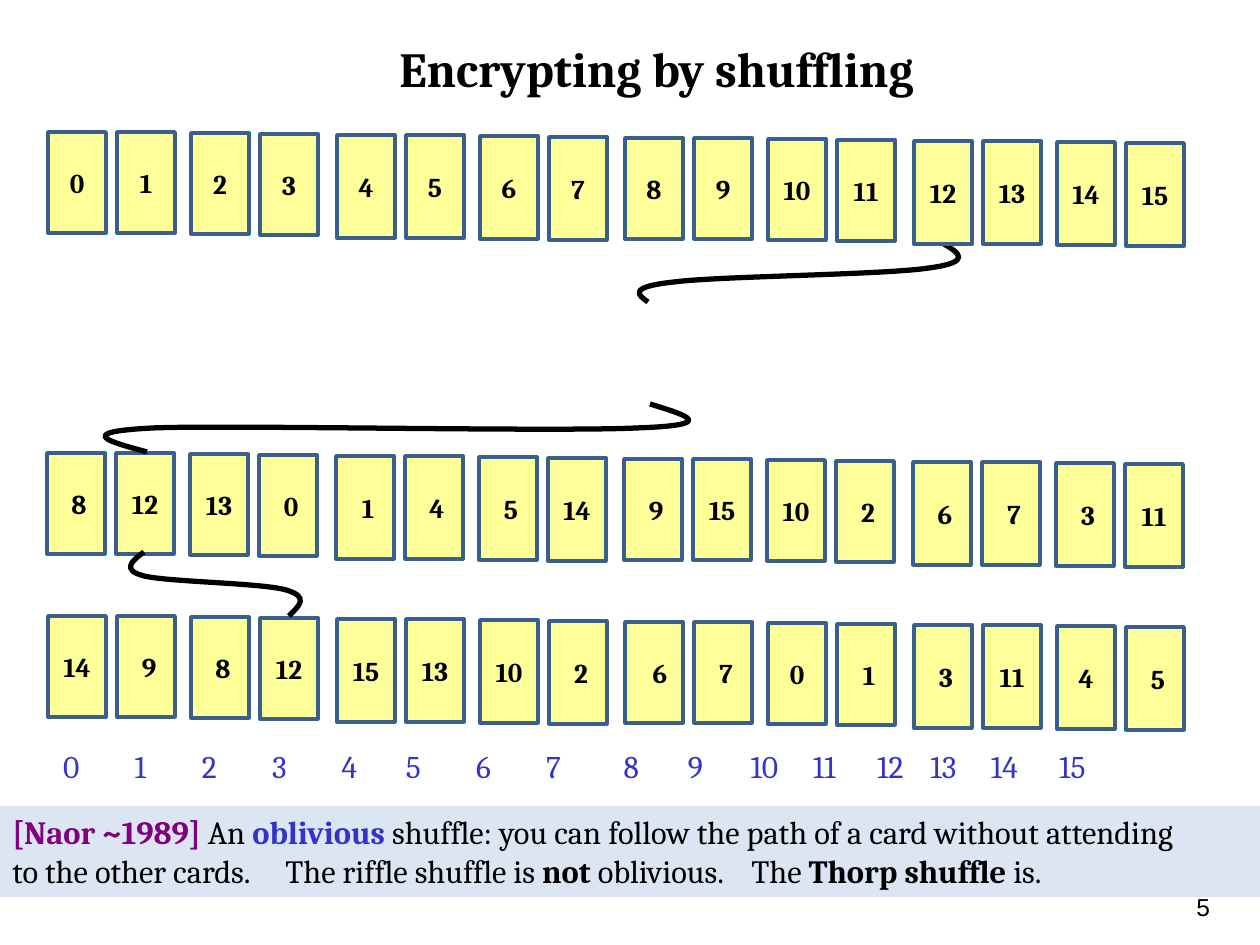
"""Build the card shuffling slide with three rows of cards and traced paths."""
import pptx
import pptx.dml.color
import pptx.enum.shapes
import pptx.enum.text
import pptx.oxml.ns
import pptx.util
import lxml.etree

RGB = pptx.dml.color.RGBColor
BLACK = RGB(0x00, 0x00, 0x00)
BLUE = RGB(0x33, 0x33, 0xCC)
PURPLE = RGB(0x80, 0x00, 0x80)
YELLOW = RGB(0xFF, 0xFF, 0x99)
NAVY = RGB(0x3A, 0x5F, 0x8C)
PALE = RGB(0xDC, 0xE6, 0xF2)
RECT = pptx.enum.shapes.MSO_SHAPE.RECTANGLE
ALIGN = pptx.enum.text.PP_ALIGN
ANCHOR = pptx.enum.text.MSO_ANCHOR
tag = pptx.oxml.ns.qn


def px(*nums):
    return [round(n * 914400 / 126) for n in nums]


def say(par, text, size, color=BLACK, bold=False, face="Cambria"):
    run = par.add_run()
    run.text = text
    run.font.size = pptx.util.Pt(size)
    run.font.color.rgb = color
    run.font.bold = bold
    run.font.name = face


deck = pptx.Presentation()
deck.slide_width, deck.slide_height = px(1260, 945)
slide = deck.slides.add_slide(deck.slide_layouts[6])
shapes = slide.shapes

page = shapes.add_textbox(*px(1184, 886, 55, 43))
say(page.text_frame.paragraphs[0], "5", 14, face="Arial")

title = shapes.add_textbox(*px(387, 32, 553, 72))
title.text_frame.word_wrap = False
say(title.text_frame.paragraphs[0], "Encrypting by shuffling", 28, bold=True)

curves = [
    [(944, 244), (959, 253), (973, 262), (929, 268), (883, 275),
     (721, 276), (674, 282), (627, 287), (638, 295), (648, 302)],
    [(650, 404), (685, 415), (721, 425), (638, 428), (556, 432),
     (236, 425), (154, 428), (72, 432), (110, 442), (147, 452)],
    [(144, 552), (132, 561), (121, 570), (144, 576), (168, 582),
     (262, 583), (286, 590), (310, 597), (299, 606), (289, 616)],
]
rows = [
    (47, 453, [8, 12, 13, 0, 1, 4, 5, 14, 9, 15, 10, 2, 6, 7, 3, 11],
     dict.fromkeys(range(10), 6), []),
    (48, 616, [14, 9, 8, 12, 15, 13, 10, 2, 6, 7, 0, 1, 3, 11, 4, 5],
     {9: 6, 8: 6, 2: 6, 6: 12, 7: 6, 1: 6, 3: 6, 5: 6}, curves),
    (48, 132, range(16), {}, []),
]
for left, top, values, nudge, paths in rows:
    for i, value in enumerate(values):
        group, place = divmod(i, 4)
        x = left + (group * 866 + 1) // 3 + (0, 69, 143, 212)[place]
        y = top + group * 3 + place * 2 // 3
        card = shapes.add_shape(RECT, *px(x, y, 58, 101 + group % 2 * 2))
        card.shadow.inherit = False
        card.fill.solid()
        card.fill.fore_color.rgb = YELLOW
        card.line.color.rgb = NAVY
        card.line.width = pptx.util.Pt(2)
        frame = card.text_frame
        frame.vertical_anchor = ANCHOR.MIDDLE
        frame.margin_left, frame.margin_right = px(nudge.get(value, 0), 0)
        par = frame.paragraphs[0]
        par.alignment = ALIGN.CENTER
        say(par, str(value), 15.5, bold=True)
    for path in paths:
        pen = shapes.build_freeform(*px(*path[0]))
        pen.add_line_segments([px(*dot) for dot in path[1:]], close=False)
        trace = pen.convert_to_shape()
        trace.shadow.inherit = False
        trace.fill.background()
        trace.line.color.rgb = BLACK
        trace.line.width = pptx.util.Pt(3)
        steps = list(trace._element.iter(tag("a:lnTo")))
        track = steps[0].getparent()
        for k in range(0, 9, 3):
            bend = lxml.etree.SubElement(track, tag("a:cubicBezTo"))
            for step in steps[k:k + 3]:
                bend.append(step[0])
                track.remove(step)

index = shapes.add_textbox(*px(44, 741, 1181, 50))
index.text_frame.word_wrap = True
count = index.text_frame.paragraphs[0]

note = shapes.add_shape(RECT, *px(0, 806, 1260, 91))
note.shadow.inherit = False
note.fill.solid()
note.fill.fore_color.rgb = PALE
note.line.fill.background()
frame = note.text_frame
frame.word_wrap = True
frame.vertical_anchor = ANCHOR.TOP
first, last = frame.paragraphs[0], frame.add_paragraph()
first.alignment = last.alignment = ALIGN.LEFT

centers = [72, 141, 210, 280, 350, 414, 484, 554, 632, 696, 765, 825, 891, 944, 1005, 1073]
for par, start, stops, kind in ((count, 57, centers, "ctr"), (last, 13, [286, 752], "l")):
    tabs = lxml.etree.SubElement(par._p.get_or_add_pPr(), tag("a:tabLst"))
    for stop in stops:
        lxml.etree.SubElement(tabs, tag("a:tab"), pos=str(px(stop - start)[0]), algn=kind)

say(count, "".join(f"\t{i}" for i in range(16)), 18, BLUE)
for par, text, color, bold in (
    (first, "[Naor ~1989] ", PURPLE, True),
    (first, "An ", BLACK, False),
    (first, "oblivious", BLUE, True),
    (first, " shuffle: you can follow the path of a card without attending", BLACK, False),
    (last, "to the other cards.\tThe riffle shuffle is ", BLACK, False),
    (last, "not", BLACK, True),
    (last, " oblivious.\tThe ", BLACK, False),
    (last, "Thorp shuffle ", BLACK, True),
    (last, "is.", BLACK, False),
):
    say(par, text, 18.5, color, bold)

deck.save("out.pptx")
